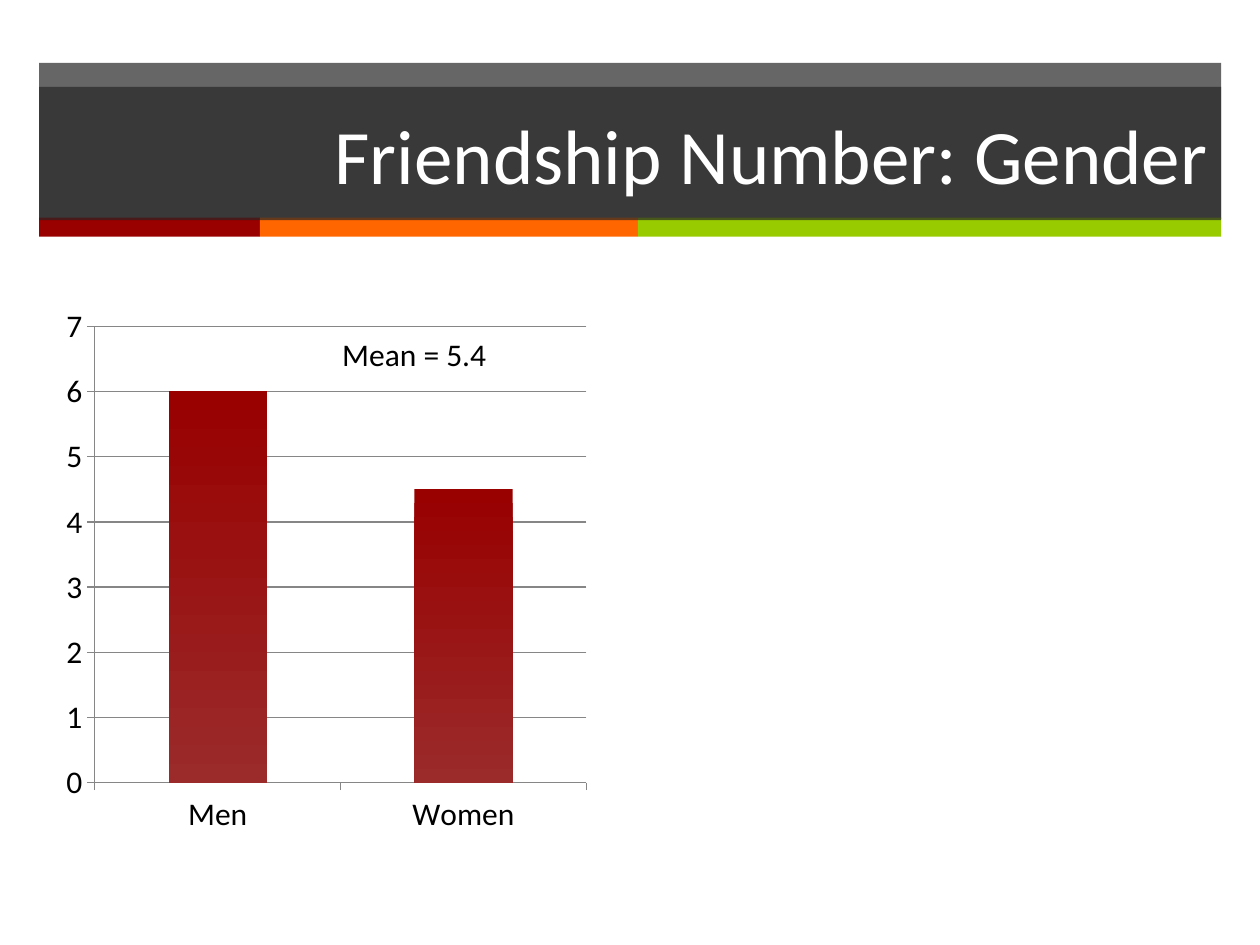
"""Build the slide comparing friendship numbers of men and women."""
from typing import NamedTuple

from lxml.etree import SubElement
from pptx import Presentation
from pptx.chart.data import CategoryChartData
from pptx.dml.color import RGBColor
from pptx.enum.chart import XL_CHART_TYPE as ChartType, XL_TICK_MARK as TickMark
from pptx.enum.shapes import MSO_SHAPE as Preset
from pptx.enum.text import MSO_ANCHOR as Anchor, PP_ALIGN as Align
from pptx.oxml.ns import qn
from pptx.util import Cm, Pt

FONT = "Calibri"
LEFT, WIDTH = 0.79, 23.83
STRIPE_TOP, STRIPE_HEIGHT = 4.39, 0.38


class Band(NamedTuple):
    left: float
    top: float
    width: float
    height: float
    color: str
    opacity: int = 100


class Stripe(NamedTuple):
    width: float
    color: str


STRIPES = [Stripe(4.45, "990000"), Stripe(7.62, "FF6600"), Stripe(11.76, "99CC00")]


def rgb(color: str) -> RGBColor:
    return RGBColor.from_string(color)


def draw_band(page, band: Band):
    box = page.shapes.add_shape(Preset.RECTANGLE, *map(Cm, band[:4]))
    box.shadow.inherit = False
    box.line.fill.background()
    box.fill.solid()
    box.fill.fore_color.rgb = rgb(band.color)
    if band.opacity < 100:
        color = box.fill._xPr.find(qn("a:solidFill"))[0]
        SubElement(color, qn("a:alpha"), val=str(band.opacity * 1000))
    return box


def write(box, text: str, *, size: float, color: str, align=Align.LEFT,
          anchor=Anchor.TOP, wrap: bool = True) -> None:
    frame = box.text_frame
    frame.word_wrap = wrap
    frame.vertical_anchor = anchor
    para = frame.paragraphs[0]
    para.alignment = align
    span = para.add_run()
    span.text = text
    span.font.name = FONT
    span.font.size = Pt(size)
    span.font.color.rgb = rgb(color)


def draw_header(page, title: str) -> None:
    draw_band(page, Band(LEFT, 1.27, WIDTH, 3.15, "262626", 70))
    left = LEFT
    for stripe in STRIPES:
        draw_band(page, Band(left, STRIPE_TOP, stripe.width, STRIPE_HEIGHT, stripe.color))
        left += stripe.width
    box = draw_band(page, Band(LEFT, 1.75, WIDTH, 2.69, "262626", 70))
    write(box, title, size=44, color="FFFFFF", align=Align.RIGHT, anchor=Anchor.MIDDLE)


def draw_chart(page, values: dict[str, float]) -> None:
    data = CategoryChartData()
    data.categories = list(values)
    data.add_series("Series 1", list(values.values()))
    chart = page.shapes.add_chart(
        ChartType.COLUMN_CLUSTERED, Cm(1.12), Cm(5.97), Cm(10.92), Cm(11.05), data).chart
    chart.has_legend = chart.has_title = False
    chart.font.name = FONT
    chart.font.size = Pt(18)
    chart.font.color.rgb = rgb("000000")

    plot = chart.plots[0]
    plot.gap_width = 150
    plot.vary_by_categories = False
    fill = plot.series[0].format.fill
    fill.gradient()
    fill.gradient_angle = 270
    for stop, color in zip(fill.gradient_stops, ("990000", "9B2A2A")):
        stop.color.rgb = rgb(color)

    scale = chart.value_axis
    scale.minimum_scale, scale.maximum_scale, scale.major_unit = 0, 7, 1
    scale.has_major_gridlines = True
    lines = [scale.major_gridlines.format.line]
    for axis in (chart.category_axis, scale):
        axis.major_tick_mark = TickMark.OUTSIDE
        lines.append(axis.format.line)
    for line in lines:
        line.color.rgb = rgb("868686")
        line.width = Pt(0.75)


def main() -> None:
    deck = Presentation()
    deck.slide_width, deck.slide_height = Cm(25.4), Cm(19.05)
    page = deck.slides.add_slide(deck.slide_layouts[6])
    draw_header(page, "Friendship Number: Gender")
    draw_chart(page, {"Men": 6, "Women": 4.5})
    label = page.shapes.add_textbox(Cm(6.65), Cm(6.63), Cm(3.45), Cm(1.8))
    write(label, "Mean = 5.4", size=18, color="000000", wrap=False)
    deck.save("out.pptx")


if __name__ == "__main__":
    main()
